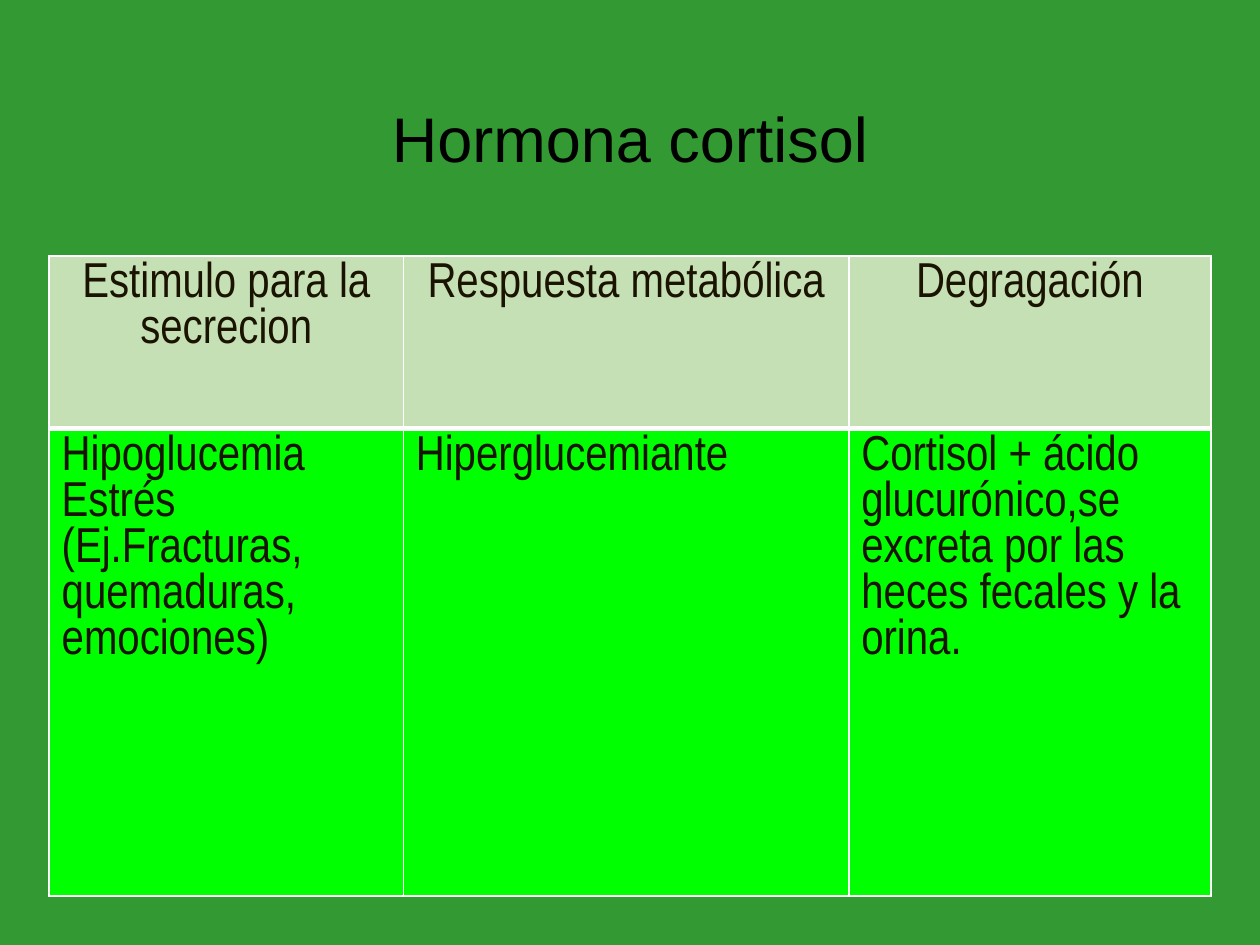
from lxml import etree
from pptx import Presentation
from pptx.dml.color import RGBColor
from pptx.enum.text import MSO_ANCHOR, PP_ALIGN
from pptx.oxml.ns import qn
from pptx.util import Cm, Pt

BLACK = RGBColor(0x00, 0x00, 0x00)
INK = RGBColor(0x1A, 0x13, 0x00)
GREEN = RGBColor(0x33, 0x99, 0x33)
PALE = RGBColor(0xC5, 0xE0, 0xB4)
LIME = RGBColor(0x00, 0xFF, 0x00)
WHITE = RGBColor(0xFF, 0xFF, 0xFF)
CENTER, LEFT = PP_ALIGN.CENTER, PP_ALIGN.LEFT
MIDDLE = MSO_ANCHOR.MIDDLE


def set_edges(cell, low):
    """Draw white borders, with the given width in points at the bottom."""
    props = cell._tc.get_or_add_tcPr()
    widths = {"lnL": 1, "lnR": 1, "lnT": 1, "lnB": low}
    for spot, (tag, width) in enumerate(widths.items()):
        line = etree.Element(qn("a:" + tag), w=str(Pt(width)))
        fill = etree.SubElement(line, qn("a:solidFill"))
        etree.SubElement(fill, qn("a:srgbClr"), val=str(WHITE))
        props.insert(spot, line)


deck = Presentation()
deck.slide_width, deck.slide_height = Cm(25.4), Cm(19.05)
slide = deck.slides.add_slide(deck.slide_layouts[5])
slide.background.fill.solid()
slide.background.fill.fore_color.rgb = GREEN

# Title
title = slide.shapes.title
title.left, title.top = Cm(1.75), Cm(1.02)
title.width, title.height = Cm(21.9), Cm(3.68)
frame = title.text_frame
frame.text = "Hormona cortisol"
frame.vertical_anchor = MIDDLE
head = frame.paragraphs[0]
head.alignment = CENTER
head.line_spacing = 0.9
head.font.name, head.font.size = "Arial", Pt(36)
head.font.color.rgb = BLACK

# Table: text, fill, alignment, height and bottom border of each row
rows = [
    (["Estimulo para la secrecion", "Respuesta metabólica", "Degragación"],
     PALE, CENTER, 3.48, 3),
    (["Hipoglucemia\nEstrés\n(Ej.Fracturas, quemaduras, emociones)",
      "Hiperglucemiante",
      "Cortisol + ácido glucurónico,se excreta por las heces fecales y la orina."],
     LIME, LEFT, 9.42, 1),
]
widths = [7.14, 8.98, 7.3]
table = slide.shapes.add_table(len(rows), len(widths), Cm(0.99), Cm(5.16),
                               Cm(sum(widths)), Cm(12.9)).table
for col, width in zip(table.columns, widths):
    col.width = Cm(width)

for row, (texts, fill, align, height, low) in zip(table.rows, rows):
    row.height = Cm(height)
    for cell, text in zip(row.cells, texts):
        cell.text = text
        cell.fill.solid()
        cell.fill.fore_color.rgb = fill
        set_edges(cell, low)
        for para in cell.text_frame.paragraphs:
            para.alignment = align
            para.font.name, para.font.size = "Arial Narrow", Pt(28)
            para.font.bold = False
            para.font.color.rgb = INK

deck.save("out.pptx")
